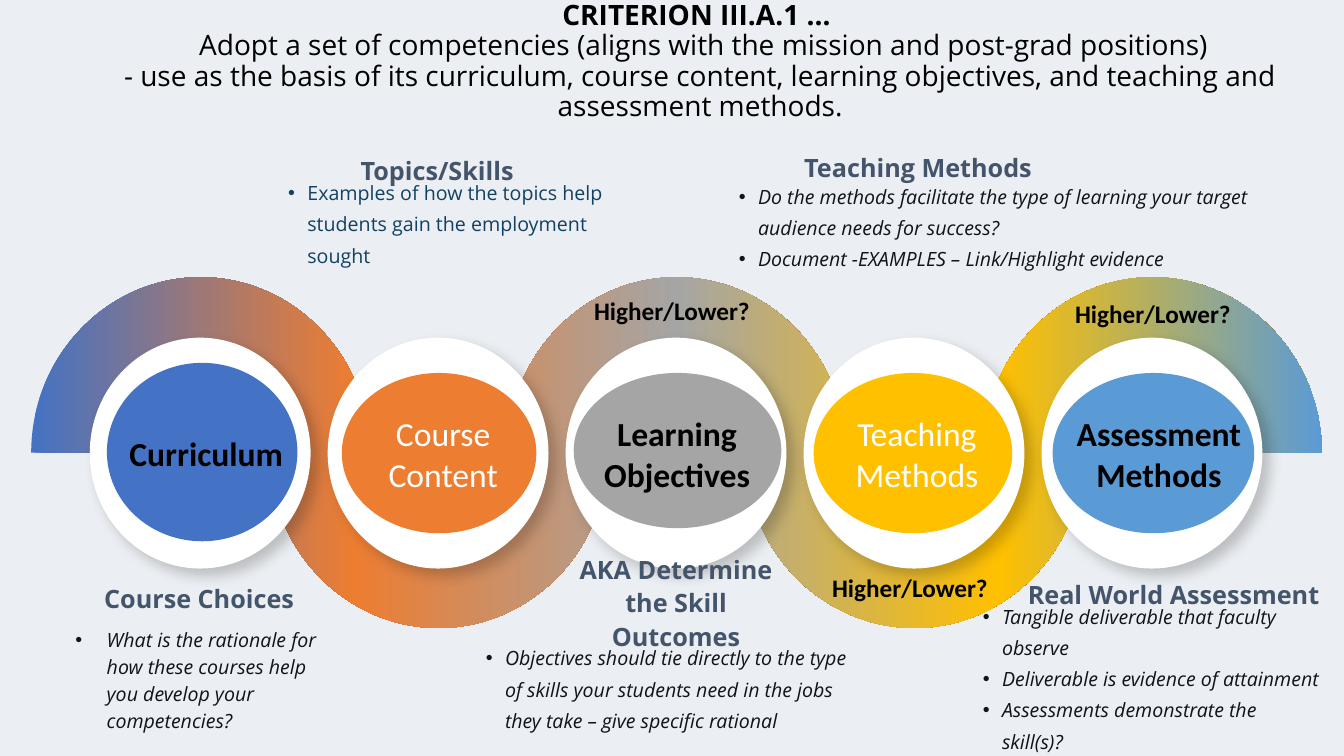
"""Build the competency wave slide: five criteria circles joined by a ribbon, with notes."""
import lxml.etree
import pptx
import pptx.dml.color
import pptx.enum.shapes
import pptx.enum.text
import pptx.oxml
import pptx.oxml.ns
import pptx.util

PX = 9144
RGB = pptx.dml.color.RGBColor
BACKGROUND = RGB(0xEB, 0xEE, 0xF2)
WHITE = RGB(0xFF, 0xFF, 0xFF)
BLACK = RGB(0, 0, 0)
SLATE = RGB(0x44, 0x54, 0x6A)
INK = RGB(0x0E, 0x16, 0x1C)
NAVY = RGB(0x12, 0x41, 0x63)
BLUE = RGB(0x44, 0x72, 0xC4)
ORANGE = RGB(0xED, 0x7D, 0x31)
GRAY = RGB(0xA5, 0xA5, 0xA5)
GOLD = RGB(0xFF, 0xC0, 0x00)
SKY = RGB(0x5B, 0x9B, 0xD5)
OVAL = pptx.enum.shapes.MSO_SHAPE.OVAL
RECTANGLE = pptx.enum.shapes.MSO_SHAPE.RECTANGLE
CENTER = pptx.enum.text.PP_ALIGN.CENTER
MIDDLE = pptx.enum.text.MSO_ANCHOR.MIDDLE
TOP = pptx.enum.text.MSO_ANCHOR.TOP
NAMESPACE = pptx.oxml.ns.nsdecls("a")
qualified = pptx.oxml.ns.qn

presentation = pptx.Presentation()
presentation.slide_width = 1333 * PX
presentation.slide_height = 750 * PX
slide = presentation.slides.add_slide(presentation.slide_layouts[5])


def add_text(box, lines, font_name, size, color, bold=False, italic=False,
             spacing=1.0, anchor=TOP, indent=None):
    """Add a text box; an indent in px makes its lines bulleted instead of centred."""
    shape = slide.shapes.add_textbox(*[length * PX for length in box])
    frame = shape.text_frame
    frame.text = "\n".join(lines)
    frame.word_wrap = True
    frame.auto_size = pptx.enum.text.MSO_AUTO_SIZE.SHAPE_TO_FIT_TEXT
    frame.vertical_anchor = anchor
    for paragraph in frame.paragraphs:
        paragraph.line_spacing = spacing
        font = paragraph.runs[0].font
        font.name, font.size, font.color.rgb = font_name, pptx.util.Pt(size), color
        font.bold, font.italic = bold, italic
        if indent is None:
            paragraph.alignment = CENTER
            continue
        properties = paragraph._p.get_or_add_pPr()
        properties.set("marL", str(indent * PX))
        properties.set("indent", str(-indent * PX))
        for markup in (f'<a:buClr {NAMESPACE}><a:srgbClr val="{color}"/></a:buClr>',
                       f'<a:buFont {NAMESPACE} typeface="Arial"/>',
                       f'<a:buChar {NAMESPACE} char="•"/>'):
            properties.append(pptx.oxml.parse_xml(markup))


def add_plain(kind, box, color):
    """Add a filled preset shape without outline or shadow."""
    shape = slide.shapes.add_shape(kind, *[length * PX for length in box])
    shape.shadow.inherit = False
    shape.fill.solid()
    shape.fill.fore_color.rgb = color
    shape.line.fill.background()
    return shape


add_plain(RECTANGLE, (0, 0, 1333, 750), BACKGROUND)

title = slide.shapes.title
slide.shapes._spTree.append(title._element)
title.left, title.top, title.width, title.height = 45 * PX, -2 * PX, 1299 * PX, 127 * PX
title.text_frame.text = (
    "CRITERION III.A.1 … \v Adopt a set of competencies (aligns with the mission and "
    "post-grad positions)\v- use as the basis of its curriculum, course content, "
    "learning objectives, and teaching and assessment methods.")
title.text_frame.word_wrap = True
title.text_frame.auto_size = pptx.enum.text.MSO_AUTO_SIZE.NONE
title.text_frame.vertical_anchor = MIDDLE
title_paragraph = title.text_frame.paragraphs[0]
title_paragraph.alignment = CENTER
title_paragraph.line_spacing = 0.9
for index, run in enumerate(title_paragraph.runs):
    run.font.name, run.font.size = "Open Sans", pptx.util.Pt(20)
    run.font.color.rgb, run.font.bold = BLACK, index == 0

centers = [199 + 236 * index for index in range(5)]
WAVE_Y, OUTER, INNER, ROUND = 449, (168, 174), (67, 67), 0.55
arcs = [(center, 1, -1, OUTER) if index % 2 == 0 else (center, 1, 1, INNER)
        for index, center in enumerate(centers)]
arcs += [(center, -1, -1, INNER) if index % 2 == 0 else (center, -1, 1, OUTER)
         for index, center in reversed(list(enumerate(centers)))]
anchors, controls = [], []
for center, heading, bulge, (radius_x, radius_y) in arcs:
    reach_x, peak_y = heading * radius_x, WAVE_Y + bulge * radius_y
    shoulder_y = WAVE_Y + bulge * radius_y * ROUND
    anchors += [(center - reach_x, WAVE_Y), (center, peak_y), (center + reach_x, WAVE_Y)]
    controls += [None,
                 ((center - reach_x, shoulder_y), (center - reach_x * ROUND, peak_y)),
                 ((center + reach_x * ROUND, peak_y), (center + reach_x, shoulder_y))]
builder = slide.shapes.build_freeform(*anchors[0], scale=PX)
builder.add_line_segments(anchors[1:], close=True)
wave = builder.convert_to_shape()
lines = list(wave._element.iter(qualified("a:lnTo")))
wave_left, wave_top = (min(values) for values in zip(*anchors))
wave_outline = lines[0].getparent()
unit = int(wave_outline.get("w")) / (wave.width / PX)
for line, anchor, handles in zip(lines, anchors[1:], controls[1:]):
    if handles:
        curve = lxml.etree.Element(qualified("a:cubicBezTo"))
        for x, y in (*handles, anchor):
            lxml.etree.SubElement(curve, qualified("a:pt"),
                                  x=str(round((x - wave_left) * unit)),
                                  y=str(round((y - wave_top) * unit)))
        wave_outline.replace(line, curve)
wave_outline.set("w", str(round(wave.width / PX * unit)))
wave.shadow.inherit = False
wave.line.fill.background()
wave.fill.gradient()
wave.fill.gradient_angle = 0
stops = wave._element.spPr.find(".//" + qualified("a:gsLst"))
for stop in list(stops):
    stops.remove(stop)
for index, color in enumerate((BLUE, ORANGE, GRAY, GOLD, SKY)):
    stops.append(pptx.oxml.parse_xml(
        f'<a:gs {NAMESPACE} pos="{index * 25000}"><a:srgbClr val="{color}"/></a:gs>'))
for point in wave_outline.iter(qualified("a:pt")):
    for axis in ("x", "y"):
        point.set(axis, str(round(int(point.get(axis)) / unit * PX)))
wave_outline.set("w", str(wave.width))
wave_outline.set("h", str(wave.height))

steps = [
    ("Curriculum ", (106, 360, 189, 177), BLUE, (115, 425, 179, 50), BLACK),
    ("Course Content", (339, 370, 193, 159), ORANGE, (367, 405, 145, 91), WHITE),
    ("Learning Objectives", (569, 370, 206, 154), GRAY, (586, 405, 171, 91), BLACK),
    ("Teaching Methods", (807, 370, 197, 159), GOLD, (836, 405, 147, 91), WHITE),
    ("Assessment Methods", (1044, 370, 200, 159), SKY, (1056, 405, 187, 91), BLACK),
]
for center, (label, disc_box, disc_color, label_box, label_color) in zip(centers, steps):
    halo = add_plain(OVAL, (center - 110, 335, 219, 229), WHITE)
    effects = halo._element.spPr.find(qualified("a:effectLst"))
    effects.append(pptx.oxml.parse_xml(
        f'<a:outerShdw {NAMESPACE} blurRad="127000" dist="88900" dir="2700000" algn="ctr" '
        'rotWithShape="0"><a:srgbClr val="000000"><a:alpha val="20000"/></a:srgbClr>'
        '</a:outerShdw>'))
    add_plain(OVAL, disc_box, disc_color)
    add_text(label_box, [label], "Calibri", 24, label_color, bold=label_color == BLACK)

headings = [
    ("Course Choices", (81, 570, 233, 44)),
    ("AKA Determine the Skill Outcomes", (544, 558, 253, 77)),
    ("Real World Assessment", (995, 569, 338, 38)),
    ("Topics/Skills", (284, 145, 299, 44)),
    ("Teaching Methods", (750, 145, 321, 38)),
]
for heading, box in headings:
    add_text(box, [heading], "Open Sans", 18, SLATE, bold=True, spacing=1.11, anchor=MIDDLE)

notes = [
    ((65, 614, 268, 118), 31, 1.14, INK,
     ["What is the rationale for how these courses help you develop your competencies?"]),
    ((472, 628, 389, 104), 19, 1.33, INK,
     ["Objectives should tie directly to the type of skills your students need in the jobs "
      "they take – give specific rational"]),
    ((965, 602, 356, 135), 19, 1.33, INK,
     ["Tangible deliverable that faculty observe", "Deliverable is evidence of attainment",
      "Assessments demonstrate the skill(s)?"]),
    ((276, 182, 379, 73), 19, 1.33, NAVY,
     ["Examples of how the topics help students gain the employment sought"]),
    ((723, 170, 545, 104), 19, 1.33, INK,
     ["Do the methods facilitate the type of learning your target audience needs for success?",
      "Document -EXAMPLES – Link/Highlight evidence"]),
]
for box, indent, spacing, color, note_lines in notes:
    add_text(box, note_lines, "Open Sans", 14, color, italic=color == INK, spacing=spacing,
             anchor=MIDDLE, indent=indent)

for left, top in ((807, 563), (571, 288), (1048, 291)):
    add_text((left, top, 191, 40), ["Higher/Lower?"], "Calibri", 18, BLACK, bold=True)

presentation.save("out.pptx")
